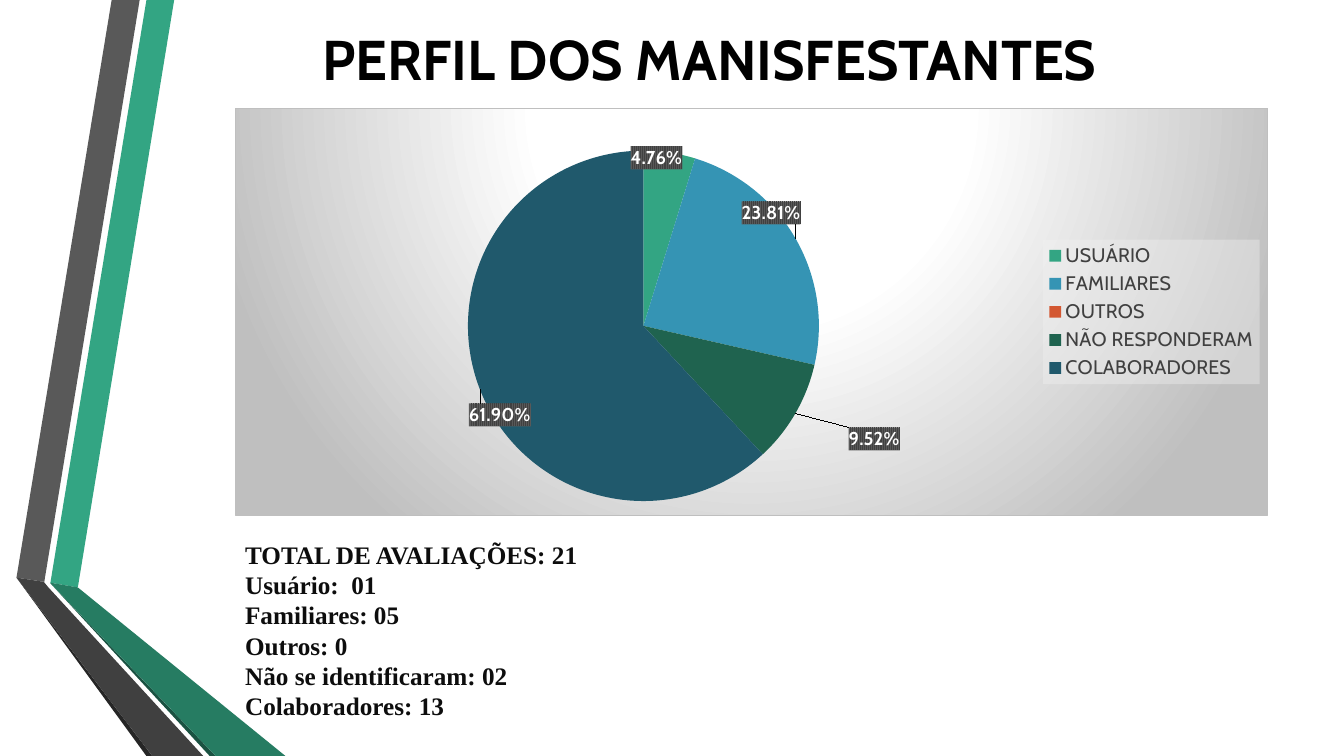
from copy import deepcopy

from lxml import etree
from pptx import Presentation
from pptx.chart.data import CategoryChartData
from pptx.dml.color import RGBColor
from pptx.enum.chart import XL_CHART_TYPE as ChartType
from pptx.enum.chart import XL_LABEL_POSITION as LabelPosition
from pptx.enum.chart import XL_LEGEND_POSITION as LegendPosition
from pptx.enum.text import MSO_ANCHOR as Anchor
from pptx.enum.text import PP_ALIGN as Align
from pptx.oxml import parse_xml
from pptx.oxml.ns import qn
from pptx.util import Pt

NAMESPACES = (
    'xmlns:c="http://schemas.openxmlformats.org/drawingml/2006/chart" '
    'xmlns:a="http://schemas.openxmlformats.org/drawingml/2006/main"'
)

# Ribbon outlines in points, from back to front
RIBBONS = [
    ("33A583", [(36, 416.2), (55.6, 419.6), (124.4, 0), (104.6, 0)]),
    ("595959", [(99.8, 0), (79.8, 0), (11.8, 412.6), (31.7, 415.6)]),
    ("262626", [(11.8, 412.6), (104.6, 540), (108.8, 540)]),
    ("1A5242", [(36, 416.6), (149.8, 540), (154.1, 540)]),
    ("267C62", [(36, 416.6), (154.1, 540), (203.9, 540), (55.6, 419.6), (36, 416.2)]),
    ("404040", [(145.2, 540), (34.6, 419.6), (31.3, 415.6), (11.8, 412.6), (108.8, 540)]),
]

# Category, value, slice colour, label offset as a share of the chart
PROFILES = [
    ("USUÁRIO", 4.76, "33A583", (0, -0.2)),
    ("FAMILIARES", 23.81, "3594B4", (0.05, -0.17)),
    ("OUTROS", 0, "D35731", None),
    ("NÃO RESPONDERAM", 9.52, "1F634F", (0.15, 0.17)),
    ("COLABORADORES", 61.90, "20596C", (-0.06, 0.14)),
]

TOTALS = [
    "TOTAL DE AVALIAÇÕES: 21",
    "Usuário:  01",
    "Familiares: 05",
    "Outros: 0",
    "Não se identificaram: 02",
    "Colaboradores: 13",
]

CHART_FILL = f"""<c:spPr {NAMESPACES}><a:gradFill><a:gsLst>
<a:gs pos="0"><a:srgbClr val="FFFFFF"/></a:gs>
<a:gs pos="39000"><a:srgbClr val="FFFFFF"/></a:gs>
<a:gs pos="100000"><a:srgbClr val="BFBFBF"/></a:gs></a:gsLst>
<a:path path="circle"><a:fillToRect l="50000" t="-80000" r="50000" b="180000"/></a:path>
</a:gradFill><a:ln w="9525"><a:solidFill><a:srgbClr val="BFBFBF"/></a:solidFill></a:ln></c:spPr>"""

LEGEND_FILL = f"""<c:spPr {NAMESPACES}><a:solidFill><a:srgbClr val="F2F2F2">
<a:alpha val="39000"/></a:srgbClr></a:solidFill></c:spPr>"""

LABEL_FILL = f"""<c:spPr {NAMESPACES}><a:pattFill prst="narVert">
<a:fgClr><a:srgbClr val="404040"/></a:fgClr><a:bgClr><a:srgbClr val="595959"/></a:bgClr>
</a:pattFill></c:spPr>"""


def color(hex_string):
    return RGBColor.from_string(hex_string)


def manual_layout(**settings):
    items = "".join(f'<c:{name} val="{value}"/>' for name, value in settings.items())
    return parse_xml(
        f"<c:layout {NAMESPACES}><c:manualLayout>{items}</c:manualLayout></c:layout>"
    )


class SlideBuilder:
    heading_font = "Cabin"
    body_font = "Times New Roman"

    def __init__(self, slide):
        self.slide = slide

    def style(self, font, name, size, hex_string, bold=False):
        font.name, font.size, font.bold = name, Pt(size), bold
        font.color.rgb = color(hex_string)

    def add_run(self, paragraph, text, *style):
        run = paragraph.add_run()
        run.text = text
        self.style(run.font, *style)

    def ribbon(self, hex_string, points):
        corners = [(Pt(x), Pt(y)) for x, y in points]
        builder = self.slide.shapes.build_freeform(*corners[0])
        builder.add_line_segments(corners[1:], close=True)
        shape = builder.convert_to_shape()
        shape.shadow.inherit = False
        shape.fill.solid()
        shape.fill.fore_color.rgb = color(hex_string)
        shape.line.fill.background()

    def title(self, text, left, top, width, height):
        shape = self.slide.shapes.title
        shape.left, shape.top = Pt(left), Pt(top)
        shape.width, shape.height = Pt(width), Pt(height)
        shape.text_frame.vertical_anchor = Anchor.MIDDLE
        paragraph = shape.text_frame.paragraphs[0]
        paragraph.alignment = Align.CENTER
        self.add_run(paragraph, text, self.heading_font, 40, "000000", True)

    def text_lines(self, lines, left, top, width, height):
        box = self.slide.shapes.add_textbox(Pt(left), Pt(top), Pt(width), Pt(height))
        frame = box.text_frame
        frame.word_wrap = True
        for index, line in enumerate(lines):
            paragraph = frame.add_paragraph() if index else frame.paragraphs[0]
            self.add_run(paragraph, line, self.body_font, 18, "0D0D0D", True)

    def pie(self, profiles, left, top, width, height):
        data = CategoryChartData()
        data.categories = [profile[0] for profile in profiles]
        data.add_series("Series 1", [profile[1] for profile in profiles])
        chart = self.slide.shapes.add_chart(
            ChartType.PIE, Pt(left), Pt(top), Pt(width), Pt(height), data
        ).chart
        chart.has_title = False
        self.style(chart.font, self.heading_font, 10, "000000")
        chart.plots[0].vary_by_categories = True
        chart_element = chart.element.find(qn("c:chart"))
        chart_element.addnext(parse_xml(CHART_FILL))

        # Place the pie inside the frame
        plot_area = chart_element.find(qn("c:plotArea"))
        for layout in plot_area.findall(qn("c:layout")):
            plot_area.remove(layout)
        plot_area.insert(0, manual_layout(
            layoutTarget="inner", xMode="edge", yMode="edge",
            x=0.225, y=0.103, w=0.34, h=0.863,
        ))

        # Legend
        chart.has_legend = True
        legend = chart.legend
        legend.position = LegendPosition.RIGHT
        legend.include_in_layout = False
        self.style(legend.font, self.heading_font, 14, "404040")
        legend_element = chart_element.find(qn("c:legend"))
        legend_element.find(qn("c:txPr")).addprevious(parse_xml(LEGEND_FILL))

        # Slices and their labels
        series = chart.plots[0].series[0]
        for index, profile in enumerate(profiles):
            fill = series.points[index].format.fill
            fill.solid()
            fill.fore_color.rgb = color(profile[2])
        self.pie_labels(series, [profile[3] for profile in profiles])

    def pie_labels(self, series, offsets):
        labels = series.data_labels
        labels.show_value = True
        labels.number_format = '0.00"%"'
        labels.number_format_is_linked = False
        labels.position = LabelPosition.CENTER
        self.style(labels.font, self.heading_font, 13.3, "FFFFFF", True)
        group = series.data_labels._element
        group.find(qn("c:txPr")).addprevious(parse_xml(LABEL_FILL))
        shared = [item for item in group if item.tag != qn("c:showLeaderLines")]
        for index, offset in enumerate(offsets):
            label = parse_xml(f'<c:dLbl {NAMESPACES}><c:idx val="{index}"/></c:dLbl>')
            if offset:
                label.append(manual_layout(x=offset[0], y=offset[1]))
                label.extend(deepcopy(shared))
            else:
                etree.SubElement(label, qn("c:delete")).set("val", "1")
            group.insert(index, label)
        leader = group.find(qn("c:showLeaderLines"))
        if leader is None:
            leader = etree.SubElement(group, qn("c:showLeaderLines"))
        leader.set("val", "1")


def main():
    presentation = Presentation()
    presentation.slide_width, presentation.slide_height = Pt(960), Pt(540)
    builder = SlideBuilder(presentation.slides.add_slide(presentation.slide_layouts[5]))

    # Ribbons on the left edge
    for hex_string, points in RIBBONS:
        builder.ribbon(hex_string, points)

    # Title, chart and totals
    builder.title("PERFIL DOS MANISFESTANTES ", 116.6, 6.5, 789, 70.5)
    builder.pie(PROFILES, 168, 77, 738, 291.6)
    builder.text_lines(TOTALS, 168, 381.6, 286.6, 181.4)

    presentation.save("out.pptx")


if __name__ == "__main__":
    main()
